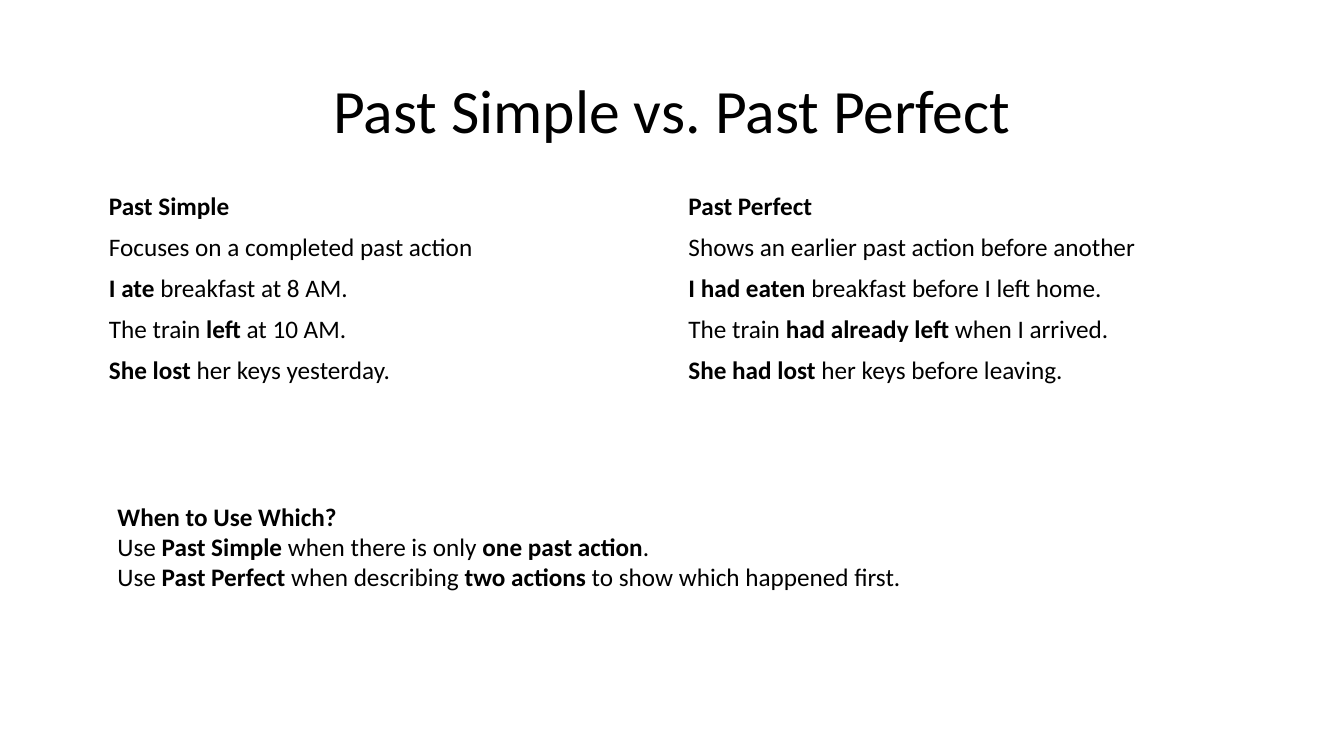
from dataclasses import dataclass

from pptx import Presentation, util as u
from pptx.dml import color
from pptx.enum import text


@dataclass(frozen=True)
class Theme:
    font: str = "Calibri"
    ink: color.RGBColor = color.RGBColor(0, 0, 0)
    paper: color.RGBColor = color.RGBColor(255, 255, 255)
    title_size: int = 44
    body_size: int = 18


class Deck:
    """Places elements by percentages of the slide's width and height."""

    def __init__(self, prs, theme):
        self.prs, self.theme = prs, theme
        self.s = prs.slides.add_slide(prs.slide_layouts[5])
        self.s.background.fill.solid()
        self.s.background.fill.fore_color.rgb = theme.paper

    def box(self, left, top, width, height):
        w, h = self.prs.slide_width, self.prs.slide_height
        return [u.Emu(round(share * full / 100)) for share, full in
                ((left, w), (top, h), (width, w), (height, h))]

    def add_runs(self, p, line, size):
        """Adds runs to a paragraph; text between ** marks is bold."""
        for i, part in enumerate(line.split("**")):
            if not part:
                continue
            r = p.add_run()
            r.text = part
            style = {"name": self.theme.font, "size": u.Pt(size), "bold": i % 2 == 1}
            for key, value in style.items():
                setattr(r.font, key, value)
            r.font.color.rgb = self.theme.ink

    def title(self, line, *place):
        sp = self.s.shapes.title
        for key, value in zip(("left", "top", "width", "height"), self.box(*place)):
            setattr(sp, key, value)
        tf = sp.text_frame
        tf.vertical_anchor = text.MSO_ANCHOR.MIDDLE
        p = tf.paragraphs[0]
        p.alignment, p.line_spacing = text.PP_ALIGN.CENTER, 0.9
        self.add_runs(p, line, self.theme.title_size)

    def table(self, rows, *place):
        grid = self.s.shapes.add_table(len(rows), len(rows[0]), *self.box(*place)).table
        grid.first_row = grid.horz_banding = False
        for row, lines in zip(grid.rows, rows):
            for cell, line in zip(row.cells, lines):
                cell.fill.background()
                cell.vertical_anchor = text.MSO_ANCHOR.MIDDLE
                self.add_runs(cell.text_frame.paragraphs[0], line, self.theme.body_size)

    def text(self, lines, *place):
        tf = self.s.shapes.add_textbox(*self.box(*place)).text_frame
        tf.word_wrap = True
        for i, line in enumerate(lines):
            p = tf.add_paragraph() if i else tf.paragraphs[0]
            self.add_runs(p, line, self.theme.body_size)


COMPARISON = [
    ("**Past Simple**", "**Past Perfect**"),
    ("Focuses on a completed past action", "Shows an earlier past action before another"),
    ("**I ate** breakfast at 8 AM.", "**I had eaten** breakfast before I left home."),
    ("The train **left** at 10 AM.", "The train **had already left** when I arrived."),
    ("**She lost** her keys yesterday.", "**She had lost** her keys before leaving."),
]
USAGE = [
    "**When to Use Which?**",
    "Use **Past Simple** when there is only **one past action**.",
    "Use **Past Perfect** when describing **two actions** to show which happened first.",
]


def main():
    prs = Presentation()
    prs.slide_width, prs.slide_height = u.Inches(13.33), u.Inches(7.5)
    deck = Deck(prs, Theme())

    # Title
    deck.title("Past Simple vs. Past Perfect", 6.9, 5.33, 86.25, 19.33)

    # Side-by-side comparison
    deck.table(COMPARISON, 7.35, 24.67, 86.25, 26.67)

    # Usage advice
    deck.text(USAGE, 8, 65.6, 75.7, 17.5)

    prs.save("out.pptx")


if __name__ == "__main__":
    main()
